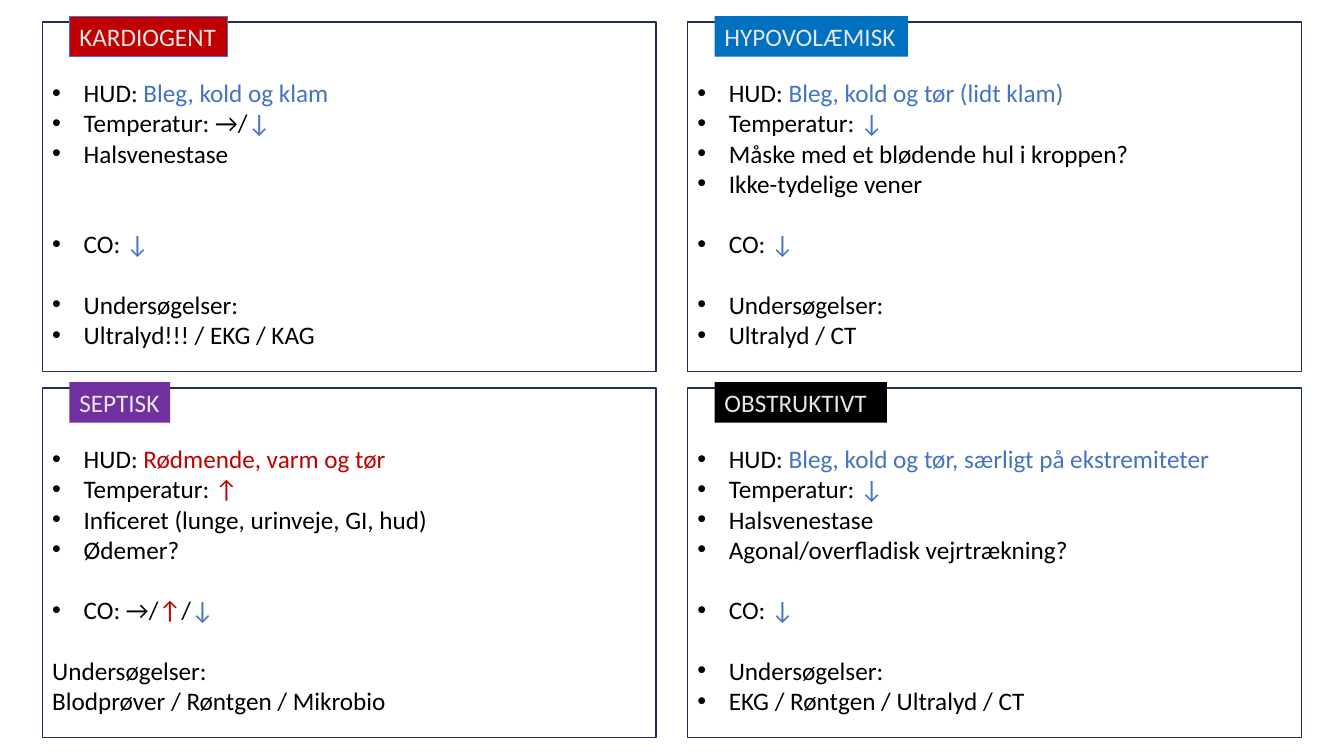
"""Build a slide comparing four types of shock in a two by two grid."""
from lxml import etree
from pptx import Presentation
from pptx.dml.color import RGBColor
from pptx.enum.shapes import MSO_SHAPE
from pptx.enum.text import MSO_ANCHOR, PP_ALIGN
from pptx.oxml.ns import qn
from pptx.util import Pt

RECTANGLE = MSO_SHAPE.RECTANGLE
TOP = MSO_ANCHOR.TOP
LEFT = PP_ALIGN.LEFT

FONT = "Calibri"
BLACK, BLUE, RED = "000000", "4472C4", "C00000"
PALE, NAVY = "E7E6E6", "1E3256"
DOWN, UP = ("↓", BLUE), ("↑", RED)

# Each line: blank lines above, bulleted, spans of text and colour.
PANELS = [
    {"name": "KARDIOGENT", "fill": RED, "line": BLUE, "width": 113, "lines": [
        (0, True, [("HUD: ", BLACK), ("Bleg, kold og klam", BLUE)]),
        (0, True, [("Temperatur: →/", BLACK), DOWN]),
        (0, True, [("Halsvenestase", BLACK)]),
        (2, True, [("CO: ", BLACK), DOWN]),
        (1, True, [("Undersøgelser:", BLACK)]),
        (0, True, [("Ultralyd!!! / EKG / KAG", BLACK)]),
    ]},
    {"name": "HYPOVOLÆMISK", "fill": "0070C0", "line": None, "width": 138.2, "lines": [
        (0, True, [("HUD: ", BLACK), ("Bleg, kold og tør (lidt klam)", BLUE)]),
        (0, True, [("Temperatur: ", BLACK), DOWN]),
        (0, True, [("Måske med et blødende hul i kroppen?", BLACK)]),
        (0, True, [("Ikke-tydelige vener", BLACK)]),
        (1, True, [("CO: ", BLACK), DOWN]),
        (1, True, [("Undersøgelser:", BLACK)]),
        (0, True, [("Ultralyd / CT", BLACK)]),
    ]},
    {"name": "SEPTISK", "fill": "7030A0", "line": None, "width": 72, "lines": [
        (0, True, [("HUD: ", BLACK), ("Rødmende, varm og tør", RED)]),
        (0, True, [("Temperatur: ", BLACK), UP]),
        (0, True, [("Inficeret (lunge, urinveje, GI, hud)", BLACK)]),
        (0, True, [("Ødemer?", BLACK)]),
        (1, True, [("CO: →/", BLACK), UP, ("/", BLACK), DOWN]),
        (1, False, [("Undersøgelser:", BLACK)]),
        (0, False, [("Blodprøver / Røntgen / Mikrobio", BLACK)]),
    ]},
    {"name": "OBSTRUKTIVT", "fill": BLACK, "line": None, "width": 123.1, "lines": [
        (0, True, [("HUD: ", BLACK), ("Bleg, kold og tør, særligt på ekstremiteter", BLUE)]),
        (0, True, [("Temperatur: ", BLACK), DOWN]),
        (0, True, [("Halsvenestase", BLACK)]),
        (0, True, [("Agonal/overfladisk vejrtrækning?", BLACK)]),
        (1, True, [("CO: ", BLACK), DOWN]),
        (1, True, [("Undersøgelser:", BLACK)]),
        (0, True, [("EKG / Røntgen / Ultralyd / CT", BLACK)]),
    ]},
]

GRID_LEFT, GRID_TOP = 30.2, 15.8
COLUMN_STEP, ROW_STEP = 460.8, 261.4
PANEL_WIDTH, PANEL_HEIGHT = 438.5, 249.8
TAG_INSET, TAG_RISE, TAG_HEIGHT = 19.4, 4.3, 29
BODY_DROP, BODY_HEIGHT = 36, 203.8
TEXT_SIZE, LINE_HEIGHT, INDENT = 18, 21.6, 22.5


def colour(value):
    return RGBColor.from_string(value)


def add_rectangle(page, left, top, width, height, fill=None, line=None, weight=1):
    shape = page.shapes.add_shape(RECTANGLE, Pt(left), Pt(top), Pt(width), Pt(height))
    shape.shadow.inherit = False
    if fill:
        shape.fill.solid()
        shape.fill.fore_color.rgb = colour(fill)
    else:
        shape.fill.background()
    if line:
        shape.line.color.rgb = colour(line)
        shape.line.width = Pt(weight)
    else:
        shape.line.fill.background()
    return shape


def add_span(para, text, ink=BLACK, size=TEXT_SIZE):
    span = para.add_run()
    span.text = text
    span.font.name = FONT
    span.font.size = Pt(size)
    span.font.color.rgb = colour(ink)


def add_bullet(para):
    properties = para._p.get_or_add_pPr()
    properties.set("marL", str(Pt(INDENT)))
    properties.set("indent", str(-Pt(INDENT)))
    etree.SubElement(properties, qn("a:buFont")).set("typeface", "Arial")
    etree.SubElement(properties, qn("a:buChar")).set("char", "•")


def add_tag(page, panel, left, top):
    tag = add_rectangle(page, left, top, panel["width"], TAG_HEIGHT,
                        fill=panel["fill"], line=panel["line"], weight=0.75)
    frame = tag.text_frame
    frame.word_wrap = True
    frame.margin_right = 0
    frame.vertical_anchor = TOP
    para = frame.paragraphs[0]
    para.alignment = LEFT
    add_span(para, panel["name"], ink=PALE)


def add_body(page, lines, left, top):
    box = page.shapes.add_textbox(Pt(left), Pt(top), Pt(PANEL_WIDTH), Pt(BODY_HEIGHT))
    frame = box.text_frame
    frame.word_wrap = True
    for index, (blanks, bulleted, spans) in enumerate(lines):
        para = frame.add_paragraph() if index else frame.paragraphs[0]
        if bulleted:
            add_bullet(para)
        if blanks:
            para.space_before = Pt(blanks * LINE_HEIGHT)
        for text, ink in spans:
            add_span(para, text, ink=ink)


def main():
    deck = Presentation()
    deck.slide_width, deck.slide_height = Pt(960), Pt(540)
    page = deck.slides.add_slide(deck.slide_layouts[6])
    for index, panel in enumerate(PANELS):
        row, column = divmod(index, 2)
        left = GRID_LEFT + column * COLUMN_STEP
        top = GRID_TOP + row * ROW_STEP
        add_rectangle(page, left, top, PANEL_WIDTH, PANEL_HEIGHT, line=NAVY)
        add_tag(page, panel, left + TAG_INSET, top - TAG_RISE)
        add_body(page, panel["lines"], left, top + BODY_DROP)
    deck.save("out.pptx")


if __name__ == "__main__":
    main()
